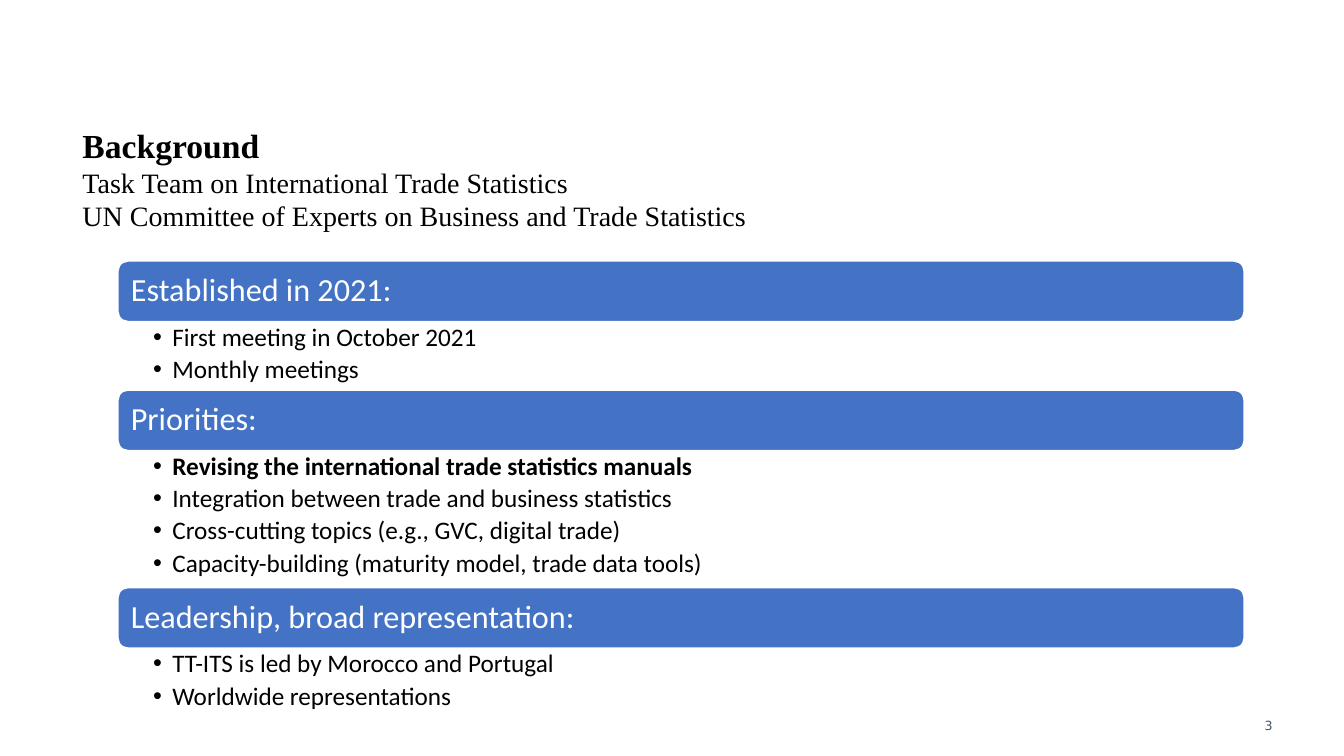
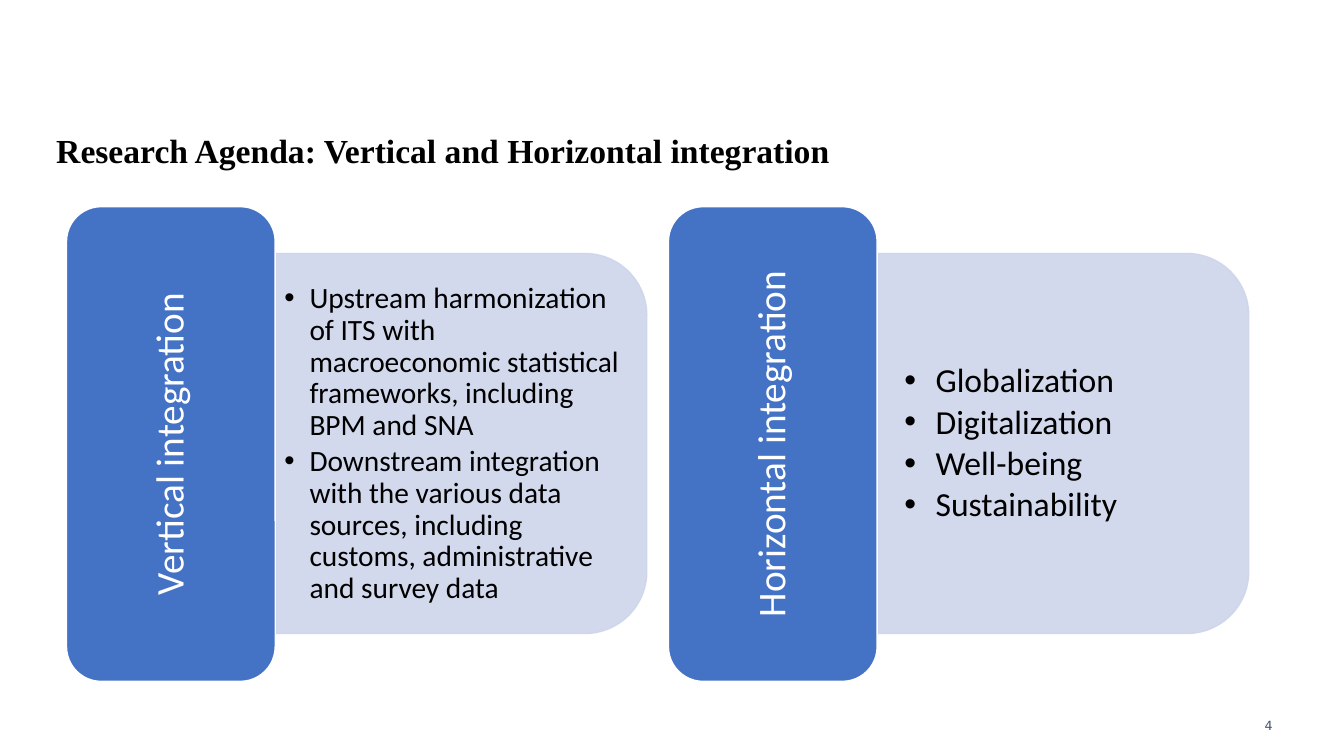
from lxml.etree import SubElement
from pptx import Presentation
from pptx.dml.color import RGBColor
from pptx.enum.shapes import MSO_SHAPE as Preset
from pptx.enum.text import MSO_ANCHOR as Anchor, PP_ALIGN as Align
from pptx.oxml.ns import qn
from pptx.util import Inches, Pt

COLORS = {"text": "000000", "white": "FFFFFF", "bar": "4472C4",
          "panel": "CFD5EA", "number": "44546A"}
TITLE = {"name": "Times New Roman", "size": Pt(24), "bold": True}
SUBTITLE = {"name": "Times New Roman", "size": Pt(20), "bold": False}
NUMBER = {"name": "DejaVu Sans", "size": Pt(9)}
SIDES = ("left", "top", "right", "bottom")


def body_font(size, bold=False):
    return {"name": "Calibri", "size": Pt(size), "bold": bold}


def set_values(target, values):
    for attribute, value in values.items():
        setattr(target, attribute, value)


class Deck:
    def __init__(self):
        self.prs = Presentation()
        set_values(self.prs, {"slide_width": Inches(13.33), "slide_height": Inches(7.5)})
        self.slide = None

    def new_slide(self, number):
        self.slide = self.prs.slides.add_slide(self.prs.slide_layouts[6])
        frame = self.text_box((10.39, 7, 2.33, 0.4), anchor=Anchor.MIDDLE)
        self.put_text(frame.paragraphs[0], str(number), NUMBER, "number", alignment=Align.RIGHT)

    def frame_style(self, frame, insets, anchor):
        set_values(frame, {"word_wrap": True, "vertical_anchor": anchor})
        set_values(frame, {f"margin_{side}": Inches(inset) for side, inset in zip(SIDES, insets)})
        return frame

    def text_box(self, place, insets=(0.1, 0.05, 0.1, 0.05), anchor=Anchor.TOP):
        box = self.slide.shapes.add_textbox(*map(Inches, place))
        return self.frame_style(box.text_frame, insets, anchor)

    def put_text(self, paragraph, text, font, color="text", **layout):
        paragraph.text = text
        set_values(paragraph, layout)
        for run in paragraph.runs:
            set_values(run.font, font)
            run.font.color.rgb = RGBColor.from_string(COLORS[color])

    def title(self, place, text, subtitle=None):
        frame = self.text_box(place)
        self.put_text(frame.paragraphs[0], text, TITLE)
        if subtitle:
            self.put_text(frame.add_paragraph(), subtitle, SUBTITLE)

    def shape(self, preset, place, fill, line):
        shape = self.slide.shapes.add_shape(preset, *map(Inches, place))
        shape.shadow.inherit = False
        shape.fill.solid()
        shape.fill.fore_color.rgb = RGBColor.from_string(COLORS[fill])
        shape.line.color.rgb = RGBColor.from_string(COLORS[line])
        shape.line.width = Pt(1)
        return shape

    def heading(self, place, text, size, insets, alignment=Align.LEFT, vertical=False):
        block = self.shape(Preset.ROUNDED_RECTANGLE, place, "bar", "white")
        frame = self.frame_style(block.text_frame, insets, Anchor.MIDDLE)
        if vertical:
            frame._txBody.bodyPr.set("vert", "vert270")
        self.put_text(frame.paragraphs[0], text, body_font(size), "white",
                      alignment=alignment, line_spacing=0.9)

    def panel(self, place):
        panel = self.shape(Preset.ROUND_2_SAME_RECTANGLE, place, "panel", "panel")
        panel.rotation = 90
        for color in panel._element.spPr.iter(qn("a:srgbClr")):
            SubElement(color, qn("a:alpha"), val="90000")

    def bullets(self, place, items, size, indent, gap, insets, anchor=Anchor.TOP, bold=()):
        frame = self.text_box(place, insets, anchor)
        for index, item in enumerate(items):
            paragraph = frame.add_paragraph() if index else frame.paragraphs[0]
            props = paragraph._p.get_or_add_pPr()
            props.set("marL", str(Inches(indent)))
            props.set("indent", str(-Inches(indent)))
            SubElement(props, qn("a:buFont"), typeface="Arial")
            SubElement(props, qn("a:buChar"), char="•")
            self.put_text(paragraph, item, body_font(size, item in bold), line_spacing=0.9)
            if index:
                paragraph.space_before = Pt(round(size * gap, 1))


def background(deck):
    deck.new_slide(3)
    deck.title((0.72, 1.19, 12.34, 1.3), "Background",
               "Task Team on International Trade Statistics\n"
               "UN Committee of Experts on Business and Trade Statistics")
    manuals = "Revising the international trade statistics manuals"
    sections = [
        ("Established in 2021:", 0.68, ["First meeting in October 2021", "Monthly meetings"]),
        ("Priorities:", 1.36, [manuals,
                               "Integration between trade and business statistics",
                               "Cross-cutting topics (e.g., GVC, digital trade)",
                               "Capacity-building (maturity model, trade data tools)"]),
        ("Leadership, broad representation:", 0.68,
         ["TT-ITS is led by Morocco and Portugal", "Worldwide representations"]),
    ]
    left, top, width, bar_height = 1.17, 2.59, 11.17, 0.6
    for heading, list_height, items in sections:
        deck.heading((left, top, width, bar_height), heading, 23, (0.1,) * 4)
        top += bar_height
        deck.bullets((left, top, width, list_height), items, 18, 0.19, 0.2,
                     (0.35, 0.03, 0.18, 0.03), bold=(manuals,))
        top += list_height


def research_agenda(deck):
    deck.new_slide(4)
    integrations = [
        ("Vertical integration", 21, 0.25, (0.09, 0.04) * 2,
         ["Upstream harmonization of ITS with macroeconomic statistical frameworks, "
          "including BPM and SNA",
          "Downstream integration with the various data sources, including customs, "
          "administrative and survey data"]),
        ("Horizontal integration", 24, 0.31, (0.27, 0.14) * 2,
         ["Globalization", "Digitalization", "Well-being", "Sustainability"]),
    ]
    for index, (heading, size, indent, insets, items) in enumerate(integrations):
        left = 0.66 + 5.97 * index
        deck.panel((left + 2.03, 2.56, 3.77, 3.68))
        deck.bullets((left + 2.07, 2.7, 3.5, 3.41), items, size, indent, 0.15,
                     insets, Anchor.MIDDLE)
        deck.heading((left, 2.05, 2.07, 4.71), heading, 28, (0.12, 0.06) * 2,
                     Align.CENTER, vertical=True)
    deck.title((0.46, 1.24, 12.64, 0.63), "Research Agenda: Vertical and Horizontal integration")


def main():
    deck = Deck()
    background(deck)
    research_agenda(deck)
    deck.prs.save("out.pptx")


if __name__ == "__main__":
    main()
